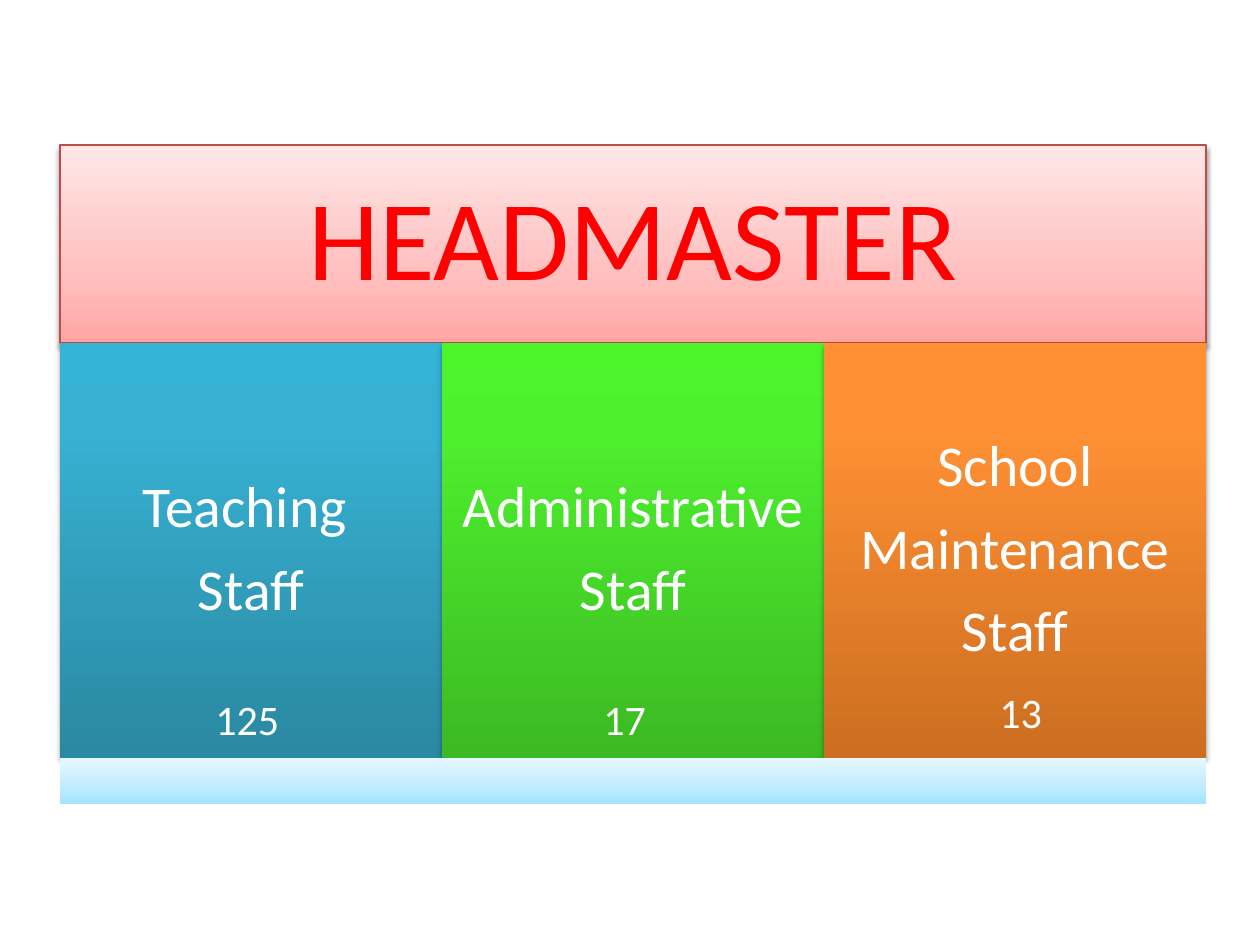
from lxml import etree
from pptx import Presentation
from pptx.dml.color import RGBColor as RGB
from pptx.enum.shapes import MSO_SHAPE as SHAPE
from pptx.enum.text import MSO_ANCHOR as ANCHOR, PP_ALIGN as ALIGN
from pptx.oxml import parse_xml
from pptx.oxml.ns import nsdecls, qn
from pptx.util import Pt

PX = 914400 / 126
COLORS = {"title": "FF0000", "text": "FFFFFF", "border": "BF4C48", "shadow": "000000"}
GRADIENTS = {  # (percent, colour), from the bottom edge up
    "headmaster": [(0, "FFA6A5"), (35, "FFC0BF"), (100, "FFE7E7")],
    "teaching": [(0, "2A88A2"), (80, "37B1D2"), (100, "34B4D6")],
    "administrative": [(0, "3CB923"), (80, "4EF02E"), (100, "4CF52A")],
    "maintenance": [(0, "CC6E20"), (80, "FF9034"), (100, "FF9136")],
    "base": [(0, "A3E4FF"), (35, "BEECFF"), (100, "E6F7FF")],
}

deck = Presentation()
deck.slide_width, deck.slide_height = round(1260 * PX), round(945 * PX)
slide = deck.slides.add_slide(deck.slide_layouts[6])


def add_block(box, gradient, shadow=None):
    """Rectangle with a vertical gradient; shadow is (distance, opacity %)."""
    block = slide.shapes.add_shape(SHAPE.RECTANGLE, *[round(v * PX) for v in box])
    block.line.fill.background()
    block.fill.gradient()
    block.fill.gradient_angle = 90
    stops = block._element.spPr.find(".//" + qn("a:gsLst"))
    for stop in list(stops):
        stops.remove(stop)
    for percent, color in GRADIENTS[gradient]:
        stop = etree.SubElement(stops, qn("a:gs"), pos=str(percent * 1000))
        etree.SubElement(stop, qn("a:srgbClr"), val=color)
    block.shadow.inherit = False
    if shadow:
        distance, opacity = shadow
        block._element.spPr.find(qn("a:effectLst")).append(parse_xml(
            f'<a:outerShdw {nsdecls("a")} blurRad="{Pt(3.1)}" dist="{Pt(distance)}" '
            f'dir="5400000" rotWithShape="0"><a:srgbClr val="{COLORS["shadow"]}">'
            f'<a:alpha val="{opacity * 1000}"/></a:srgbClr></a:outerShdw>'))
    return block


def write(shape, lines, size, color, frame_format, paragraph_format):
    frame = shape.text_frame
    for name, value in frame_format.items():
        setattr(frame, name, value)
    frame.text = "\n".join(lines)
    for paragraph in frame.paragraphs:
        for name, value in paragraph_format.items():
            setattr(paragraph, name, value)
        font = paragraph.runs[0].font
        font.name, font.size = "Calibri", Pt(size)
        font.color.rgb = RGB.from_string(COLORS[color])


def_left, column_width = 60, 382
full_width = 3 * column_width
sides = ["margin_left", "margin_top", "margin_right", "margin_bottom"]
centred = {"alignment": ALIGN.CENTER, "line_spacing": 0.9}
middle = {"word_wrap": True, "vertical_anchor": ANCHOR.MIDDLE}

# Headmaster bar
headmaster = add_block((def_left, 145, full_width, 198), "headmaster", (1.6, 38))
headmaster.line.color.rgb = RGB.from_string(COLORS["border"])
headmaster.line.width = Pt(0.75)
write(headmaster, ["HEADMASTER"], 65, "title",
      middle | dict.fromkeys(sides, round(34 * PX)),
      centred | {"space_after": Pt(0.35 * 65)})

# Staff columns
staff = [
    ("teaching", ["Teaching ", "Staff"]),
    ("administrative", ["Administrative", "Staff"]),
    ("maintenance", ["School", "Maintenance", "Staff"]),
]
for i, (group, lines) in enumerate(staff):
    column = add_block((def_left + i * column_width, 343, column_width, 415), group, (1.8, 35))
    write(column, lines, 33, "text",
          middle | dict.fromkeys(sides, round(18 * PX)),
          centred | {"space_after": Pt(0.35 * 33)})

# Base strip
add_block((def_left, 758, full_width, 46), "base")

# Head counts
counts = [("125", 203, 687, 89), ("17", 591, 687, 149), ("13", 987, 680, 129)]
for count, left, top, width in counts:
    label = slide.shapes.add_textbox(*[round(v * PX) for v in (left, top, width, 63)])
    write(label, [count], 24, "text", {"word_wrap": True}, {"alignment": ALIGN.LEFT})

deck.save("out.pptx")
